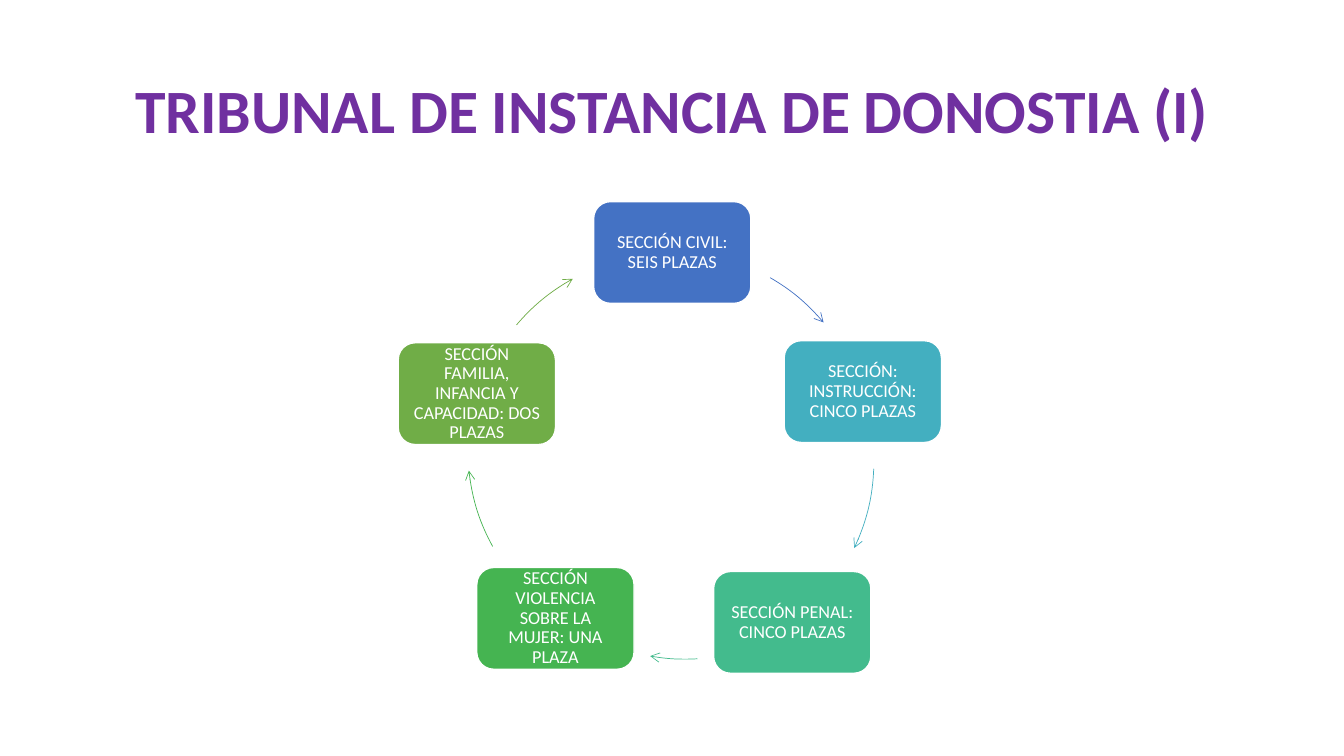
from lxml import etree
from pptx import Presentation
from pptx.dml.color import RGBColor
from pptx.enum.shapes import MSO_SHAPE
from pptx.enum.text import MSO_ANCHOR, PP_ALIGN
from pptx.oxml.ns import qn
from pptx.util import Inches, Pt

ROUNDED, ARC = MSO_SHAPE.ROUNDED_RECTANGLE, MSO_SHAPE.ARC
MIDDLE, CENTER = MSO_ANCHOR.MIDDLE, PP_ALIGN.CENTER

# Content: centres are percentages of the slide's width and height,
# arc angles are degrees clockwise from three o'clock
TITLE = "TRIBUNAL DE INSTANCIA DE DONOSTIA (I)"
SECTIONS = [
    # text, colour, box centre, arc centre, arc start and end
    ("SECCIÓN CIVIL: SEIS PLAZAS", "4472C4",
     (50.02, 33.4), (49.65, 60.13), (300.2, 319.8)),
    ("SECCIÓN: INSTRUCCIÓN: CINCO PLAZAS", "43AFC0",
     (64.2, 51.8), (49.8, 60.93), (2.3, 25.3)),
    ("SECCIÓN PENAL: CINCO PLAZAS", "43BB8D",
     (58.95, 82.33), (51, 60.13), (86.6, 99.9)),
    ("SECCIÓN VIOLENCIA SOBRE LA MUJER: UNA PLAZA", "45B451",
     (41.33, 81.8), (50.03, 59.33), (151.4, 173.8)),
    ("SECCIÓN FAMILIA, INFANCIA Y CAPACIDAD: DOS PLAZAS", "70AD47",
     (35.48, 52.07), (50.03, 60.53), (220.4, 240.9)),
]
SLIDE_W, SLIDE_H = 13.33, 7.5
BOX_W, BOX_H = 1.56, 1.01
RING = 4.06
ANGLE_UNIT = 0.6  # adjustment value of one degree

prs = Presentation()
prs.slide_width, prs.slide_height = Inches(SLIDE_W), Inches(SLIDE_H)
slide = prs.slides.add_slide(prs.slide_layouts[6])


def color(hex_value):
    return RGBColor.from_string(hex_value)


def write(shape, text, size, hex_value, bold=False, margins=(0.1, 0.1)):
    frame = shape.text_frame
    frame.word_wrap = True
    frame.vertical_anchor = MIDDLE
    frame.margin_left = frame.margin_right = Inches(margins[0])
    frame.margin_top = frame.margin_bottom = Inches(margins[1])
    paragraph = frame.paragraphs[0]
    paragraph.alignment = CENTER
    paragraph.line_spacing = 0.9
    run = paragraph.add_run()
    run.text = text
    run.font.name, run.font.size, run.font.bold = "Calibri", Pt(size), bold
    run.font.color.rgb = color(hex_value)


def add_centred(kind, centre, width, height, line_hex, line_width):
    left = SLIDE_W * centre[0] / 100 - width / 2
    top = SLIDE_H * centre[1] / 100 - height / 2
    shape = slide.shapes.add_shape(
        kind, Inches(left), Inches(top), Inches(width), Inches(height))
    shape.shadow.inherit = False
    shape.line.color.rgb = color(line_hex)
    shape.line.width = Pt(line_width)
    return shape


# Title
heading = slide.shapes.add_textbox(
    Inches(0.92), Inches(0.4), Inches(11.5), Inches(1.45))
write(heading, TITLE, 44, "7030A0", bold=True, margins=(0.1, 0.05))

# Cycle of sections, each followed by its arrow
for text, hue, box_centre, arc_centre, angles in SECTIONS:
    box = add_centred(ROUNDED, box_centre, BOX_W, BOX_H, "FFFFFF", 1)
    box.fill.solid()
    box.fill.fore_color.rgb = color(hue)
    write(box, text, 13, "FFFFFF")

    arrow = add_centred(ARC, arc_centre, RING, RING, hue, 0.5)
    arrow.fill.background()
    for index, angle in enumerate(angles):
        arrow.adjustments[index] = angle * ANGLE_UNIT
    outline = arrow.line._get_or_add_ln()
    etree.SubElement(outline, qn("a:tailEnd"), type="arrow")

prs.save("out.pptx")
